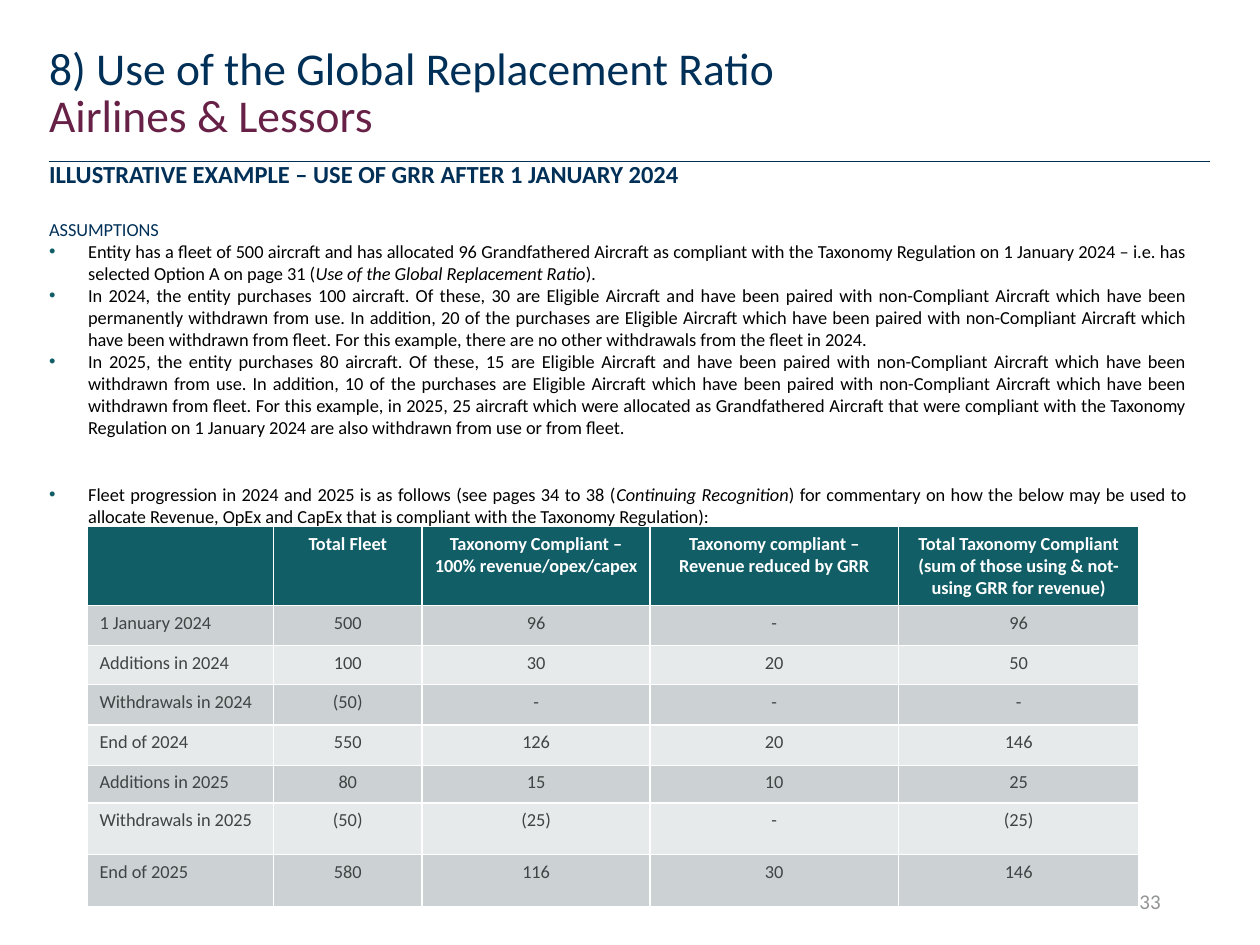
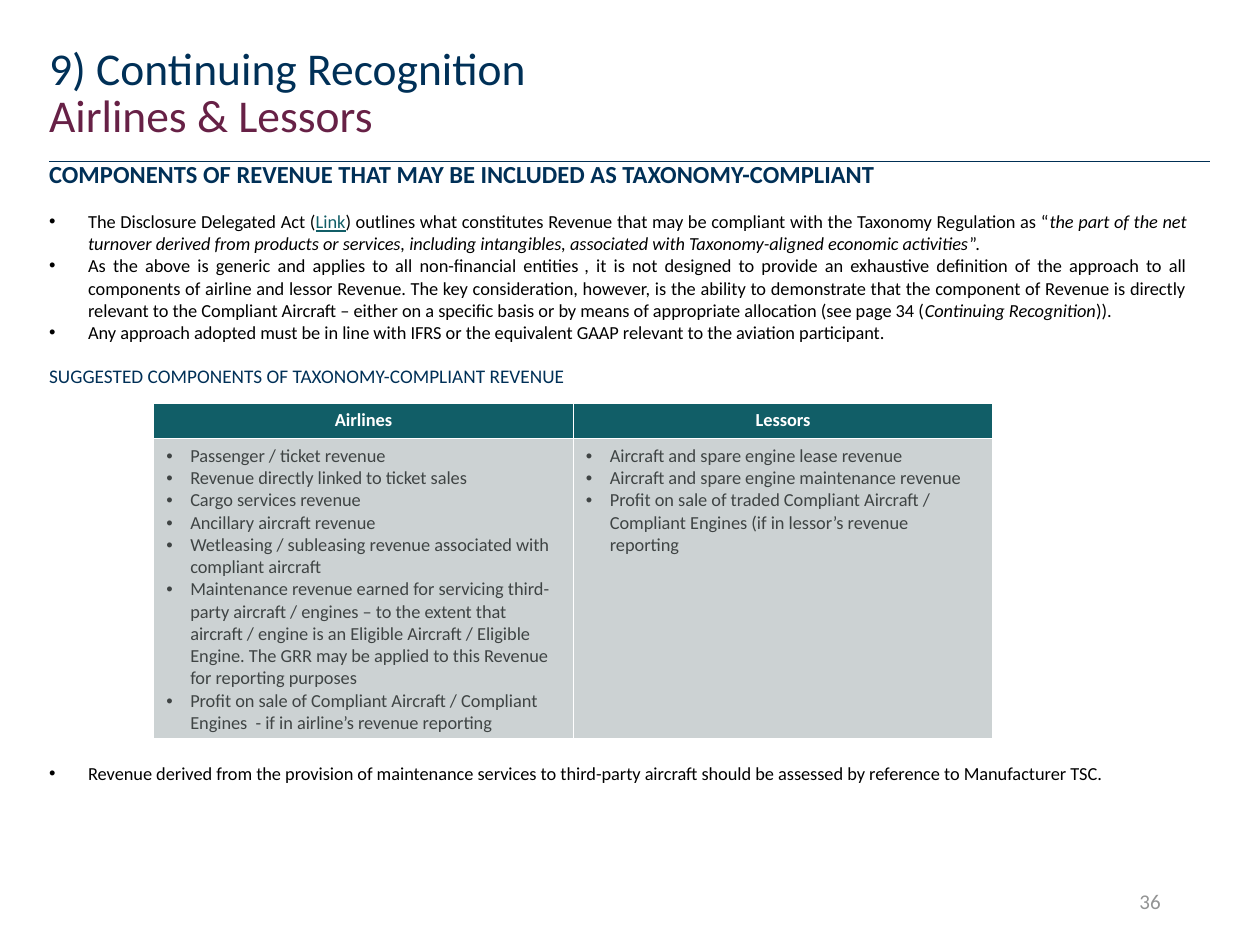
"""Builds two slides on the replacement ratio and continuing recognition for airlines and lessors."""
from dataclasses import dataclass

from lxml import etree
from pptx import Presentation
from pptx.dml.color import RGBColor
from pptx.enum.shapes import MSO_CONNECTOR
from pptx.enum.text import MSO_ANCHOR, PP_ALIGN
from pptx.oxml.ns import qn
from pptx.util import Inches, Pt

LEFT, CENTER, RIGHT, JUSTIFY = PP_ALIGN.LEFT, PP_ALIGN.CENTER, PP_ALIGN.RIGHT, PP_ALIGN.JUSTIFY
MIDDLE = MSO_ANCHOR.MIDDLE
STRAIGHT = MSO_CONNECTOR.STRAIGHT


@dataclass(frozen=True)
class Theme:
    font: str = "Calibri"
    navy: str = "003057"
    plum: str = "672146"
    teal: str = "115E67"
    rule: str = "002F55"
    black: str = "000000"
    white: str = "FFFFFF"
    slate: str = "3F4444"
    grey: str = "939494"
    bands: tuple = ("CCD2D3", "E7EAEB")
    title_size: float = 26
    heading_size: float = 14
    number_size: float = 12
    text_size: float = 10.5
    left: float = 0.39
    hang: float = 0.31
    cell_hang: float = 0.19


THEME = Theme()


def write(paragraph, text, size, color, align=LEFT, bold=False, hang=0, bullet_color=None):
    """Fills a paragraph from a string or from (text, style) parts, with an optional bullet."""
    for words, style in [(text, "")] if isinstance(text, str) else text:
        run = paragraph.add_run()
        run.text = words
        run.font.name, run.font.size, run.font.bold = THEME.font, Pt(size), bold
        run.font.italic = style == "italic"
        run.font.underline = style == "link"
        run.font.color.rgb = RGBColor.from_string(THEME.teal if style == "link" else color)
    paragraph.alignment = align
    if hang:
        properties = paragraph._p.get_or_add_pPr()
        properties.set("marL", str(Inches(hang)))
        properties.set("indent", str(-Inches(hang)))
        if bullet_color:
            tint = etree.SubElement(properties, qn("a:buClr"))
            etree.SubElement(tint, qn("a:srgbClr"), val=bullet_color)
        etree.SubElement(properties, qn("a:buFont"), typeface="Arial")
        etree.SubElement(properties, qn("a:buChar"), char="•")


def add_text_area(slide, left, top, width, height, inset=0):
    """Adds a wrapping text box and returns its text frame."""
    frame = slide.shapes.add_textbox(Inches(left), Inches(top), Inches(width), Inches(height)).text_frame
    frame.word_wrap = True
    if not inset:
        frame.margin_left = frame.margin_top = frame.margin_right = frame.margin_bottom = 0
    return frame


# Each body entry: kind, space before in points, text
CONTENT = [
    {
        "title": "8) Use of the Global Replacement Ratio",
        "page": "33",
        "bullet_color": THEME.teal,
        "label_size": 10.5,
        "heading": "ILLUSTRATIVE EXAMPLE – USE OF GRR AFTER 1 JANUARY 2024",
        "body": [
            ("label", 17, "ASSUMPTIONS"),
            ("bullet", 0, [
                ("Entity has a fleet of 500 aircraft and has allocated 96 Grandfathered Aircraft as compliant "
                 "with the Taxonomy Regulation on 1 January 2024 – i.e. has selected Option A on page 31 (", ""),
                ("Use of the Global Replacement Ratio", "italic"), (")", ""), (".", "italic")]),
            ("bullet", 0,
             "In 2024, the entity purchases 100 aircraft. Of these, 30 are Eligible Aircraft and have been "
             "paired with non-Compliant Aircraft which have been permanently withdrawn from use. In addition, "
             "20 of the purchases are Eligible Aircraft which have been paired with non-Compliant Aircraft "
             "which have been withdrawn from fleet. For this example, there are no other withdrawals from the "
             "fleet in 2024."),
            ("bullet", 0,
             "In 2025, the entity purchases 80 aircraft. Of these, 15 are Eligible Aircraft and have been "
             "paired with non-Compliant Aircraft which have been withdrawn from use. In addition, 10 of the "
             "purchases are Eligible Aircraft which have been paired with non-Compliant Aircraft which have "
             "been withdrawn from fleet. For this example, in 2025, 25 aircraft which were allocated as "
             "Grandfathered Aircraft that were compliant with the Taxonomy Regulation on 1 January 2024 are "
             "also withdrawn from use or from fleet."),
            ("bullet", 25.6, [
                ("Fleet progression in 2024 and 2025 is as follows (see pages 34 to 38 (", ""),
                ("Continuing Recognition", "italic"),
                (") for commentary on how the below may be used to allocate Revenue, OpEx and CapEx that is "
                 "compliant with the Taxonomy Regulation):", "")]),
        ],
        "closing": None,
        "table_at": (0.69, 4.18),
        "columns": [1.48, 1.18, 1.81, 1.97, 1.91],
        "rows": [0.62, 0.32, 0.31, 0.32, 0.32, 0.3, 0.41, 0.41],
        "cells": [
            ["", "Total Fleet", "Taxonomy Compliant – 100% revenue/opex/capex",
             "Taxonomy compliant – Revenue reduced by GRR",
             "Total Taxonomy Compliant (sum of those using & not-using GRR for revenue)"],
            ["1 January 2024", "500", "96", "-", "96"],
            ["Additions in 2024", "100", "30", "20", "50"],
            ["Withdrawals in 2024", "(50)", "-", "-", "-"],
            ["End of 2024", "550", "126", "20", "146"],
            ["Additions in 2025", "80", "15", "10", "25"],
            ["Withdrawals in 2025", "(50)", "(25)", "-", "(25)"],
            ["End of 2025", "580", "116", "30", "146"],
        ],
    },
    {
        "title": "9) Continuing Recognition",
        "page": "36",
        "bullet_color": None,
        "label_size": 11,
        "heading": "COMPONENTS OF REVENUE THAT MAY BE INCLUDED AS TAXONOMY-COMPLIANT",
        "body": [
            ("bullet", 12.8, [
                ("The Disclosure Delegated Act (", ""), ("Link", "link"),
                (") outlines what constitutes Revenue that may be compliant with the Taxonomy Regulation as “", ""),
                ("the part of the net turnover derived from products or services, including intangibles, "
                 "associated with Taxonomy-aligned economic activities", "italic"), ("”.", "")]),
            ("bullet", 0, [
                ("As the above is generic and applies to all non-financial entities\t, it is not designed to "
                 "provide an exhaustive definition of the approach to all components of airline and lessor "
                 "Revenue. The key consideration, however, is the ability to demonstrate that the component of "
                 "Revenue is directly relevant to the Compliant Aircraft – either on a specific basis or by "
                 "means of appropriate allocation (see page 34 (", ""),
                ("Continuing Recognition", "italic"), (")).", "")]),
            ("bullet", 0,
             "Any approach adopted must be in line with IFRS or the equivalent GAAP relevant to the aviation "
             "participant."),
            ("label", 12.2, "SUGGESTED COMPONENTS OF TAXONOMY-COMPLIANT REVENUE"),
        ],
        "closing": "Revenue derived from the provision of maintenance services to third-party aircraft should "
                   "be assessed by reference to Manufacturer TSC.",
        "table_at": (1.22, 3.2),
        "columns": [3.33, 3.33],
        "rows": [0.28, 2.38],
        "cells": [
            ["Airlines", "Lessors"],
            [
                ("Passenger / ticket revenue",
                 "Revenue directly linked to ticket sales",
                 "Cargo services revenue",
                 "Ancillary aircraft revenue",
                 "Wetleasing / subleasing revenue associated with compliant aircraft",
                 "Maintenance revenue earned for servicing third-party aircraft / engines – to the extent that "
                 "aircraft / engine is an Eligible Aircraft / Eligible Engine. The GRR may be applied to this "
                 "Revenue for reporting purposes",
                 "Profit on sale of Compliant Aircraft / Compliant Engines  - if in airline’s revenue reporting"),
                ("Aircraft and spare engine lease revenue",
                 "Aircraft and spare engine maintenance revenue",
                 "Profit on sale of traded Compliant Aircraft / Compliant Engines (if in lessor’s revenue "
                 "reporting"),
            ],
        ],
    },
]

deck = Presentation()
deck.slide_width, deck.slide_height = Inches(10), Inches(7.5)
blank = deck.slide_layouts[6]

for content in CONTENT:
    slide = deck.slides.add_slide(blank)

    title_rule = slide.shapes.add_connector(STRAIGHT, Inches(THEME.left), Inches(1.28), Inches(9.6), Inches(1.28))
    title_rule.line.color.rgb = RGBColor.from_string(THEME.rule)
    title_rule.line.width = Pt(0.75)
    etree.SubElement(title_rule._element.spPr, qn("a:effectLst"))

    for top, words, color in [(0.39, content["title"], THEME.navy), (0.76, "Airlines & Lessors", THEME.plum)]:
        title_line = add_text_area(slide, THEME.left, top, 9.2, 0.39).paragraphs[0]
        write(title_line, words, THEME.title_size, color)
        title_line.line_spacing = Pt(THEME.title_size)

    body = add_text_area(slide, THEME.left, 1.26, 9.03, 5.25)
    write(body.paragraphs[0], content["heading"], THEME.heading_size, THEME.navy, bold=True)
    for kind, space, words in content["body"]:
        paragraph = body.add_paragraph()
        if kind == "label":
            write(paragraph, words, content["label_size"], THEME.navy)
        else:
            write(paragraph, words, THEME.text_size, THEME.black, JUSTIFY,
                  hang=THEME.hang, bullet_color=content["bullet_color"])
        paragraph.space_before = Pt(space)

    if content["closing"]:
        closing = add_text_area(slide, THEME.left, 6.05, 9.03, 0.2)
        write(closing.paragraphs[0], content["closing"], THEME.text_size, THEME.black, JUSTIFY, hang=THEME.hang)

    page_number = add_text_area(slide, 7.06, 6.95, 2.25, 0.4, inset=0.1)
    page_number.vertical_anchor = MIDDLE
    write(page_number.paragraphs[0], content["page"], THEME.number_size, THEME.grey, RIGHT)

    columns, rows = content["columns"], content["rows"]
    left, top = content["table_at"]
    table = slide.shapes.add_table(len(rows), len(columns), Inches(left), Inches(top),
                                   Inches(sum(columns)), Inches(sum(rows))).table
    for column, width in zip(table.columns, columns):
        column.width = Inches(width)
    for row_index, (height, entries) in enumerate(zip(rows, content["cells"])):
        table.rows[row_index].height = Inches(height)
        header = row_index == 0
        fill = THEME.teal if header else THEME.bands[(row_index - 1) % 2]
        color = THEME.white if header else THEME.slate
        for column_index, entry in enumerate(entries):
            cell = table.cell(row_index, column_index)
            cell.fill.solid()
            cell.fill.fore_color.rgb = RGBColor.from_string(fill)
            listed = isinstance(entry, tuple)
            align = CENTER if header or (column_index and not listed) else LEFT
            for line_index, words in enumerate(entry if listed else [entry]):
                frame = cell.text_frame
                paragraph = frame.add_paragraph() if line_index else frame.paragraphs[0]
                write(paragraph, words, THEME.text_size, color, align, header,
                      hang=THEME.cell_hang if listed else 0)

deck.save("out.pptx")
